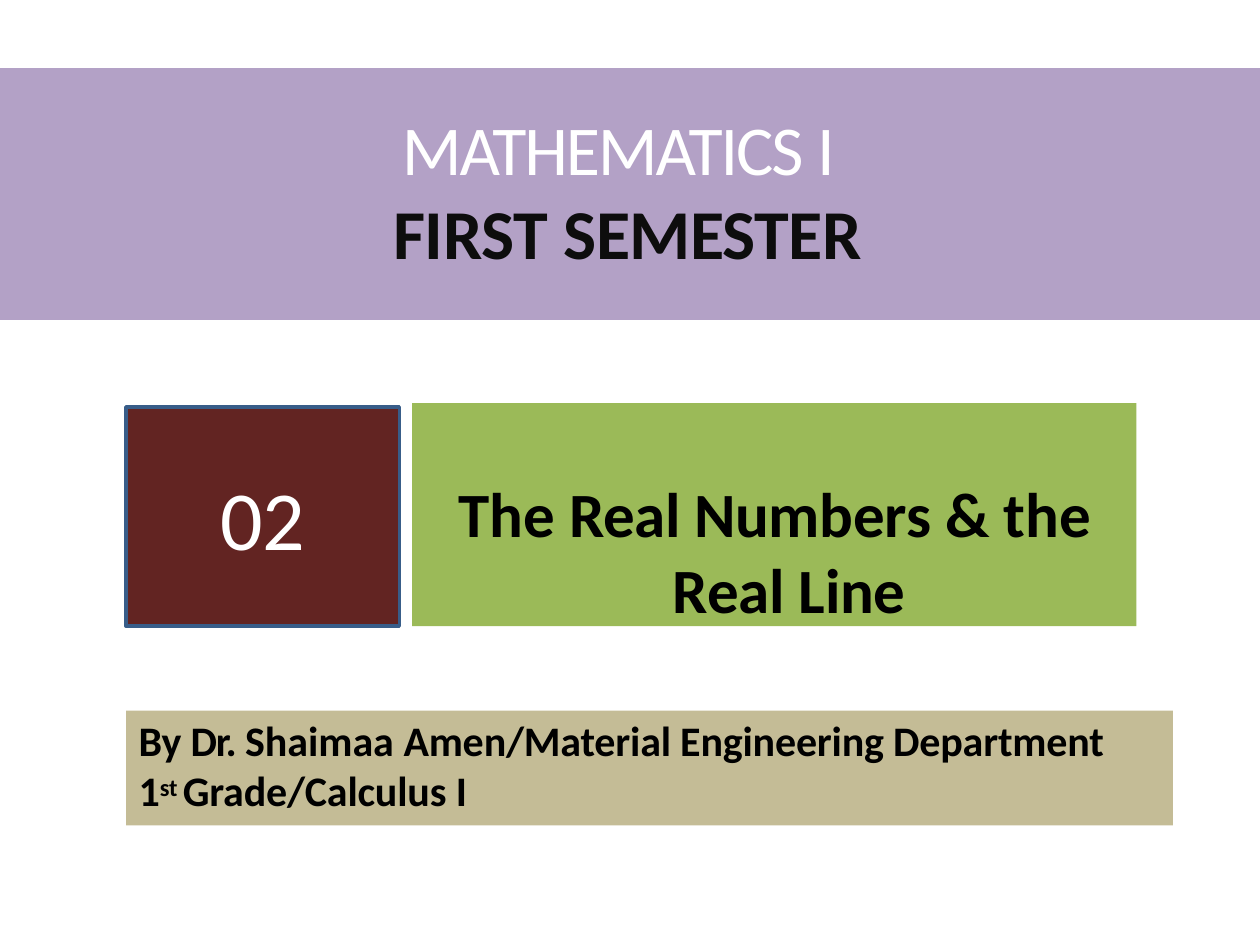
"""Build the opening slide of a calculus lecture on the real numbers."""
from pptx import Presentation
from pptx.dml.color import RGBColor
from pptx.enum.shapes import MSO_SHAPE
from pptx.enum.text import MSO_ANCHOR, PP_ALIGN
from pptx.util import Inches, Pt

RECT = MSO_SHAPE.RECTANGLE
TOP, MIDDLE = MSO_ANCHOR.TOP, MSO_ANCHOR.MIDDLE
LEFT, CENTER = PP_ALIGN.LEFT, PP_ALIGN.CENTER
COLS, ROWS = 100, 75
UNIT = Inches(0.1)
THEME = {
    "font": "Calibri",
    "band": "B3A1C6", "topic": "9BBA58", "author": "C4BC96",
    "number": "622422", "edge": "385D89",
    "white": "FFFFFF", "dark": "0D0D0D", "black": "000000",
    "title_size": 40, "topic_size": 36, "author_size": 24, "number_size": 48,
}


def grid(*cells):
    return [round(cell * UNIT) for cell in cells]


def write(shape, lines, size, top=0, anchor=TOP, align=LEFT, pitch=None):
    frame = shape.text_frame
    frame.word_wrap = True
    frame.vertical_anchor = anchor
    frame.margin_left = frame.margin_right = frame.margin_bottom = 0
    frame.margin_top = Inches(top)
    for index, (margin, indent, before, color, bold, parts) in enumerate(lines):
        para = frame.add_paragraph() if index else frame.paragraphs[0]
        para.alignment = align
        para.space_before = Pt(before)
        if pitch:
            para.line_spacing = Pt(pitch)
        props = para._p.get_or_add_pPr()
        props.set("marL", str(Inches(margin)))
        props.set("indent", str(Inches(indent)))
        for text, track, *raised in parts:
            run = para.add_run()
            run.text = text
            run.font.name = THEME["font"]
            run.font.size = Pt(THEME[size])
            run.font.bold = bold
            run.font.color.rgb = RGBColor.from_string(THEME[color])
            marks = run._r.get_or_add_rPr()
            marks.set("spc", str(round(track * 100)))
            if raised:
                marks.set("baseline", str(raised[0] * 1000))


deck = Presentation()
deck.slide_width, deck.slide_height = grid(COLS, ROWS)
slide = deck.slides.add_slide(deck.slide_layouts[6])

blocks = {}
for name, cells in {
    "band": (0, 5.4, COLS, 20),
    "topic": (32.7, 32, 57.5, 17.7),
    "author": (10, 56.4, 83.1, 9.1),
    "number": (10, 32.3, 21.7, 17.4),
}.items():
    block = slide.shapes.add_shape(RECT, *grid(*cells))
    block.shadow.inherit = False
    block.fill.solid()
    block.fill.fore_color.rgb = RGBColor.from_string(THEME[name])
    block.line.fill.background()
    blocks[name] = block

edge = blocks["number"].line
edge.color.rgb = RGBColor.from_string(THEME["edge"])
edge.width = Pt(2)

title = slide.shapes.add_textbox(*grid(31.1, 8.3, 37.6, 13.6))
write(title, [
    (0.08, 0, 0.9, "white", False, [("MATHEMATICS ", -1.2), ("I", -0.1)]),
    (0.01, 0, 0, "dark", True, [("FIRST ", -0.2), ("SEMESTER", -0.3)]),
], "title_size", top=0.01, pitch=48)

write(blocks["topic"], [
    (2.07, -1.7, 0, "black", True, [
        ("The ", -0.1), ("Real Numbers ", -0.2), ("& the ", 0),
        ("Real ", -0.2), ("Line", -0.1)]),
], "topic_size", top=0.57)

write(blocks["author"], [
    (0.1, 0, 2.4, "black", True, [
        ("By ", -0.1), ("Dr. ", -0.8), ("Shaimaa ", 0),
        ("Amen/Material Engineering Department", -0.1)]),
    (0.1, 0, 0, "black", True, [
        ("1", -0.1), ("st ", -0.1, 24), ("Grade/Calculus ", -0.1), ("I", 0)]),
], "author_size", top=0.03, pitch=28.7)

write(blocks["number"], [(0, 0, 0, "white", False, [("02", 0)])],
      "number_size", anchor=MIDDLE, align=CENTER)

deck.save("out.pptx")
